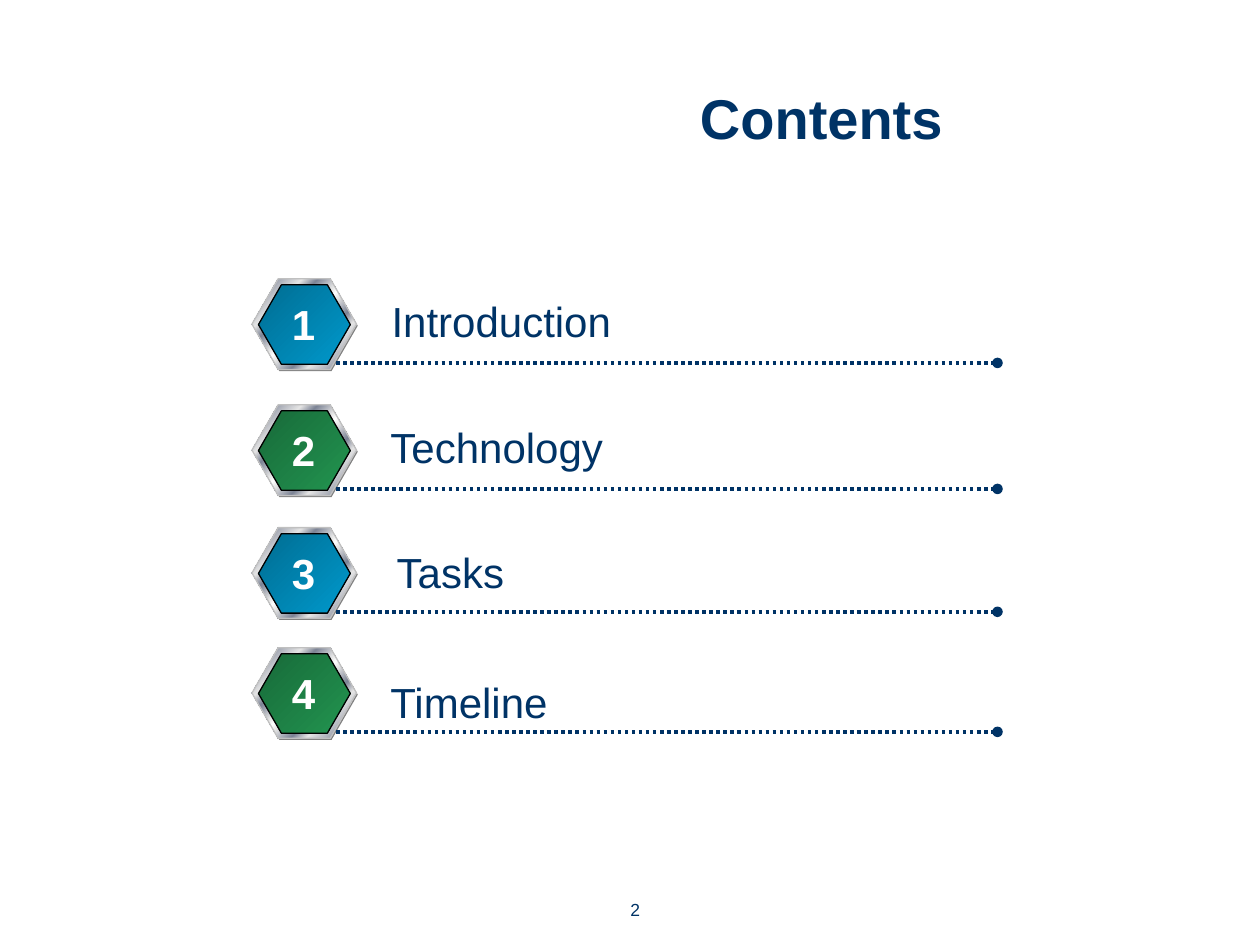
from dataclasses import dataclass

from lxml import etree
from pptx import Presentation
from pptx.dml.color import RGBColor
from pptx.enum.dml import MSO_LINE
from pptx.enum.shapes import MSO_CONNECTOR, MSO_SHAPE
from pptx.enum.text import MSO_ANCHOR, MSO_AUTO_SIZE, PP_ALIGN
from pptx.oxml.ns import qn
from pptx.util import Pt

HEXAGON = MSO_SHAPE.HEXAGON
STRAIGHT = MSO_CONNECTOR.STRAIGHT
DOTTED = MSO_LINE.ROUND_DOT
MIDDLE = MSO_ANCHOR.MIDDLE
FIT_SHAPE = MSO_AUTO_SIZE.SHAPE_TO_FIT_TEXT
NO_FIT = MSO_AUTO_SIZE.NONE
LEFT, CENTER, RIGHT = PP_ALIGN.LEFT, PP_ALIGN.CENTER, PP_ALIGN.RIGHT

FONT = "Arial"
NAVY = "003366"
WHITE = "FFFFFF"
SHADE = "808080"
METAL = [(0, "E6E6E6"), (7, "7D8496"), (26, "E6E6E6"), (34, "7D8496"),
         (46, "E6E6E6"), (50, "FFFFFF"), (54, "E6E6E6"), (66, "7D8496"),
         (74, "E6E6E6"), (93, "7D8496"), (100, "E6E6E6")]
BLUE = [(0, "006D92"), (100, "0099CC")]
GREEN = [(0, "186A39"), (100, "229450")]

BADGE_LEFT = 144
RIM_SIZE = (59.76, 51.84)
FACE_SIZE = (52.5, 45.4)


@dataclass
class Entry:
    title: str
    top: float
    face: list
    label_left: float
    label_top: float
    label_width: float
    align: PP_ALIGN = LEFT


ENTRIES = [
    Entry("Introduction", 159.3, BLUE, 216, 165.6, 141, CENTER),
    Entry("Technology", 231.3, GREEN, 216, 237.6, 137.5),
    Entry("Tasks", 301.5, BLUE, 219.6, 308.9, 76.3),
    Entry("Timeline", 370.1, GREEN, 216, 383, 105),
]


def rgb(color: str) -> RGBColor:
    return RGBColor.from_string(color)


def style_text(frame, text: str, size: float, color: str, align, bold=False) -> None:
    frame.text = text
    paragraph = frame.paragraphs[0]
    paragraph.alignment = align
    font = paragraph.font
    font.name, font.size, font.bold = FONT, Pt(size), bold
    font.color.rgb = rgb(color)


def add_text(shapes, text: str, left: float, top: float, width: float, height: float,
             size: float, color: str, align, bold=False, wrap=False) -> None:
    frame = shapes.add_textbox(Pt(left), Pt(top), Pt(width), Pt(height)).text_frame
    style_text(frame, text, size, color, align, bold)
    frame.word_wrap = wrap
    frame.auto_size = NO_FIT if wrap else FIT_SHAPE


def add_hexagon(shapes, left: float, top: float, size: tuple):
    hexagon = shapes.add_shape(HEXAGON, Pt(left), Pt(top), Pt(size[0]), Pt(size[1]))
    hexagon.adjustments[0] = 0.289
    hexagon.shadow.inherit = False
    return hexagon


def fill_gradient(shape, stops: list, outline: str) -> None:
    shape.fill.gradient()
    shape.fill.gradient_angle = 315
    stop_list = shape.element.spPr.find(".//" + qn("a:gsLst"))
    for old_stop in list(stop_list):
        stop_list.remove(old_stop)
    for position, color in stops:
        stop = etree.SubElement(stop_list, qn("a:gs"), pos=str(position * 1000))
        etree.SubElement(stop, qn("a:srgbClr"), val=color)
    shape.line.color.rgb = rgb(outline)
    shape.line.width = Pt(0.75)


def add_badge(shapes, top: float, face_stops: list) -> None:
    badge = shapes.add_group_shape().shapes
    shade = add_hexagon(badge, BADGE_LEFT + 0.7, top + 0.9, RIM_SIZE)
    shade.fill.solid()
    shade.fill.fore_color.rgb = rgb(SHADE)
    shade.line.fill.background()
    rim = add_hexagon(badge, BADGE_LEFT, top, RIM_SIZE)
    fill_gradient(rim, METAL, "C0C0C0")
    face = add_hexagon(badge, BADGE_LEFT + 3.7, top + 3.5, FACE_SIZE)
    fill_gradient(face, face_stops, "000000")


def add_leader(shapes, y: float) -> None:
    leader = shapes.add_connector(STRAIGHT, Pt(192), Pt(y), Pt(570), Pt(y))
    leader.line.color.rgb = rgb(NAVY)
    leader.line.width = Pt(2)
    leader.line.dash_style = DOTTED
    properties = leader.element.spPr
    etree.SubElement(properties.find(qn("a:ln")), qn("a:tailEnd"), type="oval")
    etree.SubElement(properties, qn("a:effectLst"))


def add_entry(shapes, number: int, entry: Entry) -> None:
    add_badge(shapes, entry.top, entry.face)
    add_leader(shapes, entry.top + 48.1)
    add_text(shapes, entry.title, entry.label_left, entry.label_top,
             entry.label_width, 36, 24, NAVY, entry.align)
    add_text(shapes, str(number), 159.5, entry.top + 7.9, 28, 36,
             24, WHITE, CENTER, bold=True)


def main() -> None:
    deck = Presentation()
    deck.slide_width, deck.slide_height = Pt(720), Pt(540)
    slide = deck.slides.add_slide(deck.slide_layouts[5])

    heading = slide.shapes.title
    heading.left, heading.top = Pt(42), Pt(48)
    heading.width, heading.height = Pt(504), Pt(38)
    style_text(heading.text_frame, "Contents", 32, NAVY, RIGHT, bold=True)
    heading.text_frame.vertical_anchor = MIDDLE
    heading.text_frame.auto_size = NO_FIT

    for number, entry in enumerate(ENTRIES, start=1):
        add_entry(slide.shapes, number, entry)

    add_text(slide.shapes, "2", 330, 510, 66, 21, 10, NAVY, CENTER, wrap=True)
    deck.save("out.pptx")


if __name__ == "__main__":
    main()
